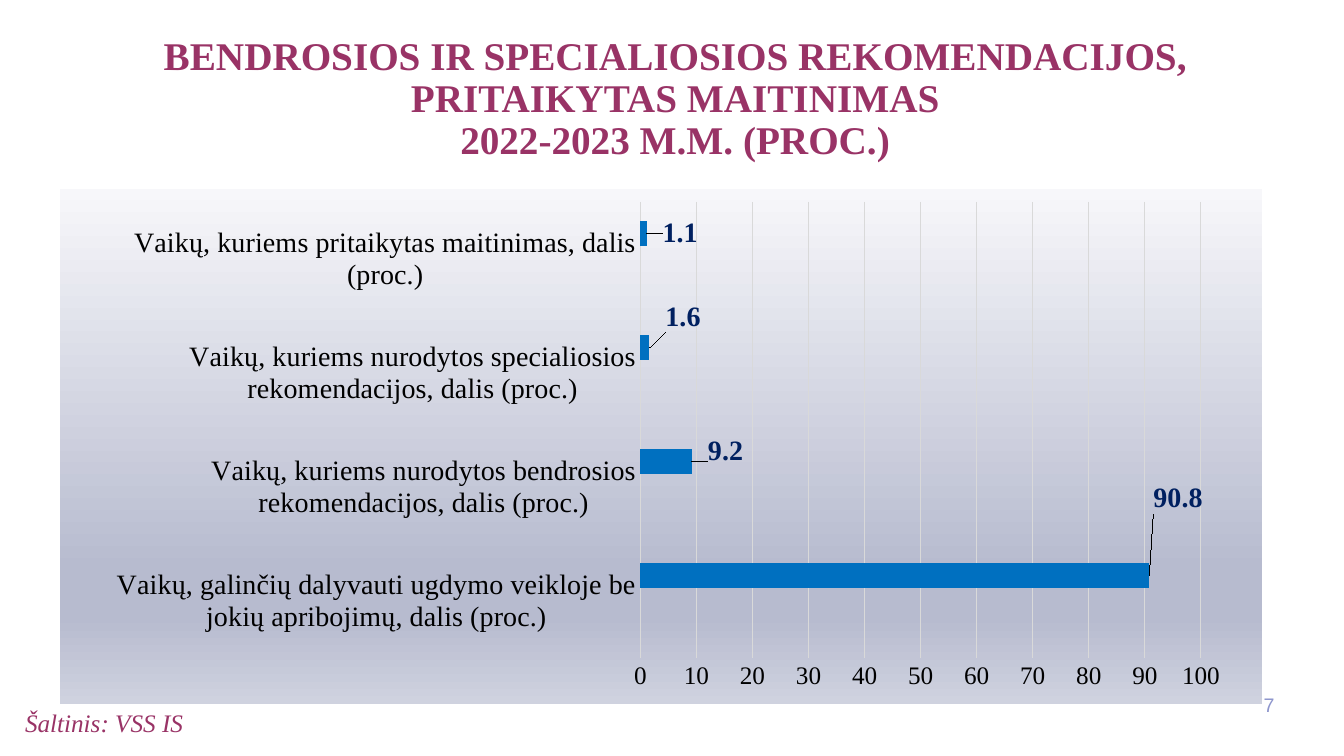
from dataclasses import dataclass

from lxml.etree import SubElement
from pptx import Presentation
from pptx.chart.data import CategoryChartData
from pptx.dml.color import RGBColor
from pptx.enum.chart import XL_CHART_TYPE, XL_LABEL_POSITION, XL_TICK_MARK
from pptx.enum.text import MSO_ANCHOR, PP_ALIGN
from pptx.oxml import parse_xml
from pptx.oxml.ns import nsdecls, qn
from pptx.util import Inches, Pt


@dataclass(frozen=True)
class Theme:
    """Colours, typefaces and type sizes of the slide."""
    serif: str = "Times New Roman"
    sans: str = "Arial"
    chart_font: str = "Calibri"
    accent: str = "993366"
    number: str = "8E96CD"
    text: str = "000000"
    value: str = "002060"
    grid: str = "D9D9D9"
    series: tuple = ("8D95CC", "2E34D0", "0070C0")
    gradient: tuple = ((0, "F7F7FA"), (74, "B7BBCF"), (83, "B7BBCF"), (100, "CFD2DF"))
    title_size: int = 28
    category_size: int = 20
    axis_size: int = 18
    source_size: int = 18
    number_size: int = 14
    chart_size: int = 10


THEME = Theme()
TITLE = ("BENDROSIOS IR SPECIALIOSIOS REKOMENDACIJOS,\v"
         "PRITAIKYTAS MAITINIMAS\v2022-2023 M.M. (PROC.)")
SHARES = (
    ("Vaikų, galinčių dalyvauti ugdymo veikloje be jokių apribojimų, dalis (proc.)", 90.8),
    ("Vaikų, kuriems nurodytos bendrosios rekomendacijos, dalis (proc.)", 9.2),
    ("Vaikų, kuriems nurodytos specialiosios rekomendacijos, dalis (proc.)", 1.6),
    ("Vaikų, kuriems pritaikytas maitinimas, dalis (proc.)", 1.1),
)
LABEL_OFFSETS = ((0, -0.15), (0.01, -0.02), (0.01, -0.06), (0.01, 0))
PLOT_AREA = {"x": 0.483, "y": 0.026, "w": 0.466, "h": 0.886}


def style_font(font, name, size, color, bold=False, italic=False):
    """Set typeface, size, colour and emphasis of a font."""
    font.name, font.size, font.bold, font.italic = name, Pt(size), bold, italic
    font.color.rgb = RGBColor.from_string(color)


def place(shape, left, top, width, height):
    """Position a shape, in inches."""
    shape.left, shape.top = Inches(left), Inches(top)
    shape.width, shape.height = Inches(width), Inches(height)


def set_title(slide):
    """Move and format the title placeholder."""
    title = slide.shapes.title
    place(title, 0.15, 0.31, 13.09, 1.56)
    title.text_frame.text = TITLE
    title.text_frame.vertical_anchor = MSO_ANCHOR.TOP
    para = title.text_frame.paragraphs[0]
    para.alignment, para.line_spacing = PP_ALIGN.CENTER, 0.9
    style_font(para.font, THEME.serif, THEME.title_size, THEME.accent, bold=True)


def add_text(slide, text, bounds, alignment, *font_style, italic=False):
    """Add a one-paragraph text box."""
    box = slide.shapes.add_textbox(*map(Inches, bounds))
    frame = box.text_frame
    frame.word_wrap, frame.vertical_anchor = True, MSO_ANCHOR.MIDDLE
    para = frame.paragraphs[0]
    para.text, para.alignment = text, alignment
    style_font(para.font, *font_style, italic=italic)


def add_layout(parent, index, values, inner=False):
    """Insert a manual chart layout into a chart element."""
    for old in parent.findall(qn("c:layout")):
        parent.remove(old)
    layout = parse_xml(f"<c:layout {nsdecls('c')}><c:manualLayout/></c:layout>")
    settings = {"layoutTarget": "inner", "xMode": "edge", "yMode": "edge"} if inner else {}
    for tag, value in {**settings, **values}.items():
        SubElement(layout[0], qn(f"c:{tag}")).set("val", str(value))
    parent.insert(index, layout)


def fill_chart(chart):
    """Give the chart area a vertical gradient without an outline."""
    stops = "".join(
        f'<a:gs pos="{position * 1000}"><a:srgbClr val="{color}"/></a:gs>'
        for position, color in THEME.gradient)
    chart._chartSpace.find(qn("c:chart")).addnext(parse_xml(
        f'<c:spPr {nsdecls("c", "a")}><a:gradFill><a:gsLst>{stops}</a:gsLst>'
        '<a:lin ang="5400000" scaled="0"/></a:gradFill>'
        '<a:ln><a:noFill/></a:ln></c:spPr>'))


def style_axis(axis, size):
    """Hide the axis line and ticks and set the label font."""
    axis.major_tick_mark = axis.minor_tick_mark = XL_TICK_MARK.NONE
    axis.format.line.fill.background()
    style_font(axis.tick_labels.font, THEME.serif, size, THEME.text)


def label_points(series):
    """Show each value beside its bar, shifted by its offset."""
    for index, (x, y) in enumerate(LABEL_OFFSETS):
        label = series.points[index].data_label
        style_font(label.font, THEME.serif, THEME.category_size, THEME.value, bold=True)
        label.position = XL_LABEL_POSITION.OUTSIDE_END
        add_layout(series._element.findall(".//" + qn("c:dLbl"))[index], 1, {"x": x, "y": y})


def add_share_chart(slide):
    """Add the bar chart of children's shares."""
    categories, values = zip(*SHARES)
    data = CategoryChartData()
    data.categories = categories
    for name, series_values in (("Series 1", [None] * len(values)),
                                ("Series 2", [None] * len(values)),
                                ("Series 3", values)):
        data.add_series(name, series_values)
    bounds = map(Inches, (0.59, 1.87, 11.93, 5.11))
    chart = slide.shapes.add_chart(XL_CHART_TYPE.BAR_CLUSTERED, *bounds, data).chart
    chart.has_title = chart.has_legend = False
    style_font(chart.font, THEME.chart_font, THEME.chart_size, THEME.text)
    fill_chart(chart)
    add_layout(chart._chartSpace.find(".//" + qn("c:plotArea")), 0, PLOT_AREA, inner=True)

    plot = chart.plots[0]
    plot.gap_width, plot.overlap, plot.vary_by_categories = 150, 0, False
    for series, color in zip(plot.series, THEME.series):
        series.format.fill.solid()
        series.format.fill.fore_color.rgb = RGBColor.from_string(color)
    label_points(plot.series[2])

    style_axis(chart.category_axis, THEME.category_size)
    scale = chart.value_axis
    style_axis(scale, THEME.axis_size)
    scale.minimum_scale, scale.maximum_scale, scale.major_unit = 0, 100, 10
    scale.has_major_gridlines = True
    grid = scale.major_gridlines.format.line
    grid.width = Pt(0.75)
    grid.color.rgb = RGBColor.from_string(THEME.grid)


def main():
    """Build and save the slide."""
    deck = Presentation()
    deck.slide_width, deck.slide_height = Inches(13.33), Inches(7.5)
    slide = deck.slides.add_slide(deck.slide_layouts[5])
    set_title(slide)
    add_text(slide, "Šaltinis: VSS IS", (0.15, 6.98, 6.3, 0.38), PP_ALIGN.LEFT,
             THEME.serif, THEME.source_size, THEME.accent, italic=True)
    add_text(slide, "7", (12.22, 6.79, 0.52, 0.4), PP_ALIGN.RIGHT,
             THEME.sans, THEME.number_size, THEME.number)
    add_share_chart(slide)
    deck.save("out.pptx")


if __name__ == "__main__":
    main()
